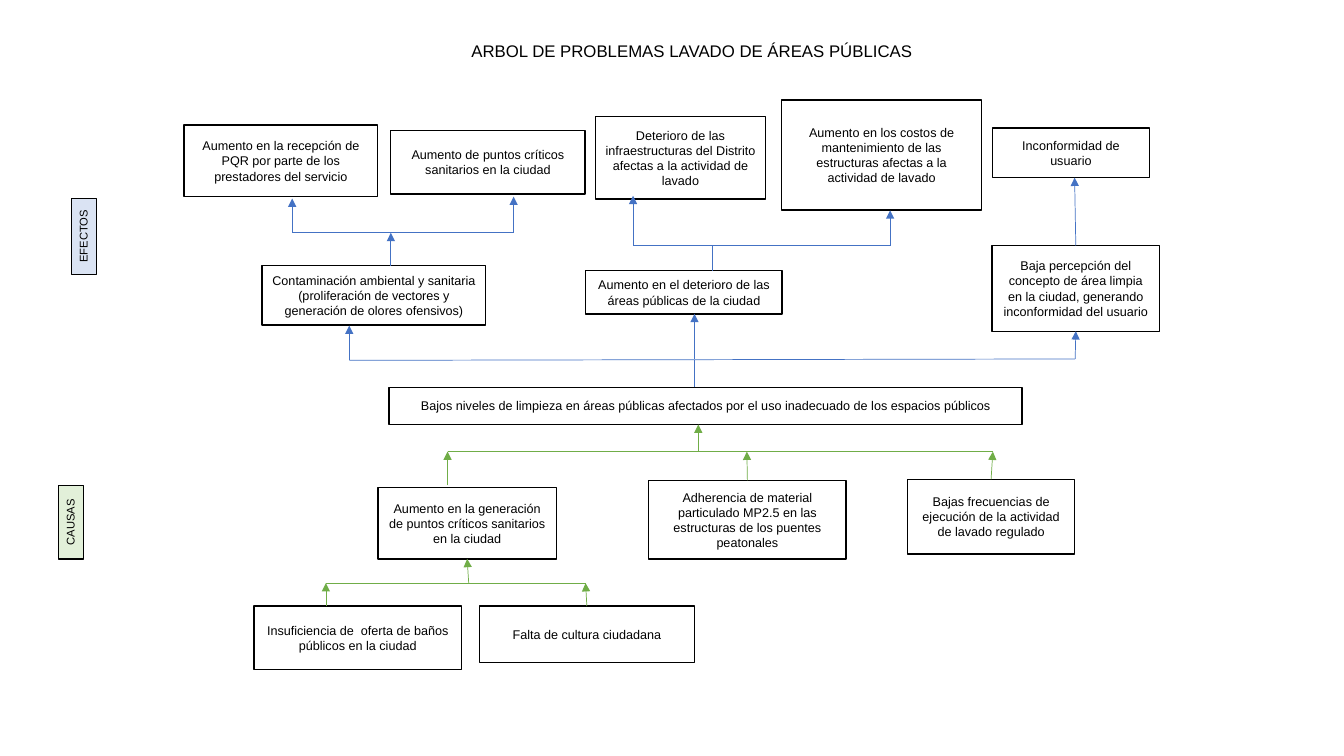
from dataclasses import dataclass
from typing import Optional

from lxml.etree import SubElement
from pptx import Presentation
from pptx.dml.color import RGBColor
from pptx.enum.shapes import MSO_CONNECTOR, MSO_SHAPE
from pptx.enum.text import MSO_ANCHOR, PP_ALIGN
from pptx.oxml.ns import qn
from pptx.shapes.autoshape import Shape
from pptx.slide import Slide
from pptx.util import Pt

BLACK = RGBColor(0x00, 0x00, 0x00)
WHITE = RGBColor(0xFF, 0xFF, 0xFF)
BLUE = RGBColor(0x44, 0x72, 0xC4)
GREEN = RGBColor(0x70, 0xAD, 0x47)
PALE_BLUE = RGBColor(0xDA, 0xE3, 0xF3)
PALE_GREEN = RGBColor(0xE2, 0xF0, 0xD9)

TOP, BOTTOM = 0, 2


@dataclass(frozen=True)
class Box:
    key: str
    left: float
    top: float
    width: float
    height: float
    text: str
    fill: RGBColor = WHITE
    border: float = 1
    size: float = 9
    rotation: float = 0
    anchor: MSO_ANCHOR = MSO_ANCHOR.MIDDLE


@dataclass(frozen=True)
class Line:
    color: RGBColor
    x1: float
    y1: float
    x2: float
    y2: float
    arrow: bool = True
    start: Optional[str] = None
    finish: Optional[str] = None


BOXES = [
    Box("problem", 277.9, 276.6, 452.2, 26.6,
        "Bajos niveles de limpieza en áreas públicas afectados por el uso inadecuado de los espacios públicos"),
    Box("critical points cause", 270, 348.1, 127.4, 51.1,
        "Aumento en la generación de puntos críticos sanitarios en la ciudad"),
    Box("particles", 463.3, 343.1, 141.1, 56.2,
        "Adherencia de material particulado MP2.5 en las estructuras de los puentes peatonales"),
    Box("frequency", 648.2, 342.5, 119.5, 53.3,
        "Bajas frecuencias de ejecución de la actividad de lavado regulado"),
    Box("pollution", 187.2, 189.8, 159.8, 42.5,
        "Contaminación ambiental y sanitaria (proliferación de vectores y generación de olores ofensivos)"),
    Box("decay", 418.3, 193.4, 140.4, 31,
        "Aumento en el deterioro de las áreas públicas de la ciudad"),
    Box("perception", 708.7, 175.4, 119.5, 61.2,
        "Baja percepción del concepto de área limpia en la ciudad, generando inconformidad del usuario"),
    Box("complaints", 131.5, 89.3, 138.2, 51.1,
        "Aumento en la recepción de PQR por parte de los prestadores del servicio"),
    Box("critical points effect", 279, 93.3, 139, 45.4,
        "Aumento de puntos críticos sanitarios en la ciudad"),
    Box("infrastructure", 425.2, 83.2, 121.7, 59,
        "Deterioro de las infraestructuras del Distrito afectas a la actividad de lavado"),
    Box("costs", 558.4, 71.5, 142.6, 78.5,
        "Aumento en los costos de mantenimiento de las estructuras afectas a la actividad de lavado"),
    Box("toilets", 181.4, 433, 148.3, 45.4,
        "Insuficiencia de  oferta de baños públicos en la ciudad"),
    Box("culture", 342.5, 433, 153.4, 40.3, "Falta de cultura ciudadana"),
    Box("dissatisfaction", 708.8, 91.4, 112.3, 35.3, "Inconformidad de usuario"),
    Box("effects tag", 33.1, 159.8, 54, 18, "EFECTOS", PALE_BLUE, 0.75, 8, 270, MSO_ANCHOR.TOP),
    Box("causes tag", 24.5, 364, 52.6, 18, "CAUSAS", PALE_GREEN, 0.75, 8, 270, MSO_ANCHOR.TOP),
]

LINES = [
    Line(BLUE, 249.5, 257.4, 768, 256.4, arrow=False),
    Line(BLUE, 249.5, 257.4, 249.5, 232.6),
    Line(BLUE, 768, 256.4, 768, 236.6, finish="perception"),
    Line(BLUE, 496.1, 276.6, 496.1, 257.4, arrow=False),
    Line(BLUE, 496.1, 256.4, 496.1, 224.2),
    Line(BLUE, 208.7, 166.3, 366.9, 166.3, arrow=False),
    Line(BLUE, 208.7, 166.3, 208.7, 141.8),
    Line(BLUE, 366.9, 166.3, 366.9, 140.4),
    Line(BLUE, 279.2, 189.8, 279.2, 166.3),
    Line(BLUE, 452.2, 175.4, 635.8, 175.4, arrow=False),
    Line(BLUE, 452.2, 175.4, 452.2, 139.9),
    Line(BLUE, 635.8, 175.4, 635.8, 150.3),
    Line(BLUE, 509, 193.4, 509, 175.4, arrow=False),
    Line(BLUE, 768, 175.4, 767.6, 126.9, start="perception"),
    Line(GREEN, 319.7, 322.6, 709.2, 322.6, arrow=False),
    Line(GREEN, 498.8, 322.6, 498.8, 303.2),
    Line(GREEN, 319.7, 346.5, 319.7, 322.6),
    Line(GREEN, 533.8, 343.1, 533.5, 322.6, start="particles"),
    Line(GREEN, 708, 342.5, 709.2, 322.6, start="frequency"),
    Line(GREEN, 232.8, 416.5, 418.3, 416.5, arrow=False),
    Line(GREEN, 232.8, 433, 232.8, 416.5),
    Line(GREEN, 419.2, 433, 418.3, 416.5, start="culture"),
    Line(GREEN, 334.8, 416.5, 333.7, 399.2, finish="critical points cause"),
]


def write_text(shape: Shape, text: str, size: float, anchor: MSO_ANCHOR) -> None:
    frame = shape.text_frame
    frame.word_wrap = True
    frame.vertical_anchor = anchor
    para = frame.paragraphs[0]
    para.alignment = PP_ALIGN.CENTER
    span = para.add_run()
    span.text = text
    for attribute, value in {"name": "Arial", "size": Pt(size)}.items():
        setattr(span.font, attribute, value)
    span.font.color.rgb = BLACK


def draw_box(page: Slide, box: Box) -> Shape:
    shape = page.shapes.add_shape(
        MSO_SHAPE.RECTANGLE, Pt(box.left), Pt(box.top), Pt(box.width), Pt(box.height))
    shape.rotation = box.rotation
    shape.shadow.inherit = False
    shape.fill.solid()
    shape.fill.fore_color.rgb = box.fill
    shape.line.color.rgb = BLACK
    shape.line.width = Pt(box.border)
    write_text(shape, box.text, box.size, box.anchor)
    return shape


def draw_line(page: Slide, line: Line, shapes: dict[str, Shape]) -> None:
    connector = page.shapes.add_connector(
        MSO_CONNECTOR.STRAIGHT, Pt(line.x1), Pt(line.y1), Pt(line.x2), Pt(line.y2))
    connector.line.color.rgb = line.color
    connector.line.width = Pt(0.5)
    if line.start:
        connector.begin_connect(shapes[line.start], TOP)
    if line.finish:
        connector.end_connect(shapes[line.finish], BOTTOM)
    properties = connector.element.spPr
    if line.arrow:
        SubElement(properties.find(qn("a:ln")), qn("a:tailEnd"), type="triangle")
    SubElement(properties, qn("a:effectLst"))


def main() -> None:
    deck = Presentation()
    deck.slide_width, deck.slide_height = Pt(960), Pt(540)
    page = deck.slides.add_slide(deck.slide_layouts[6])
    title = page.shapes.add_textbox(Pt(157), Pt(25.6), Pt(674.6), Pt(21.6))
    write_text(title, "ARBOL DE PROBLEMAS LAVADO DE ÁREAS PÚBLICAS", 12, MSO_ANCHOR.TOP)
    shapes = {box.key: draw_box(page, box) for box in BOXES}
    for line in LINES:
        draw_line(page, line, shapes)
    deck.save("out.pptx")


if __name__ == "__main__":
    main()
